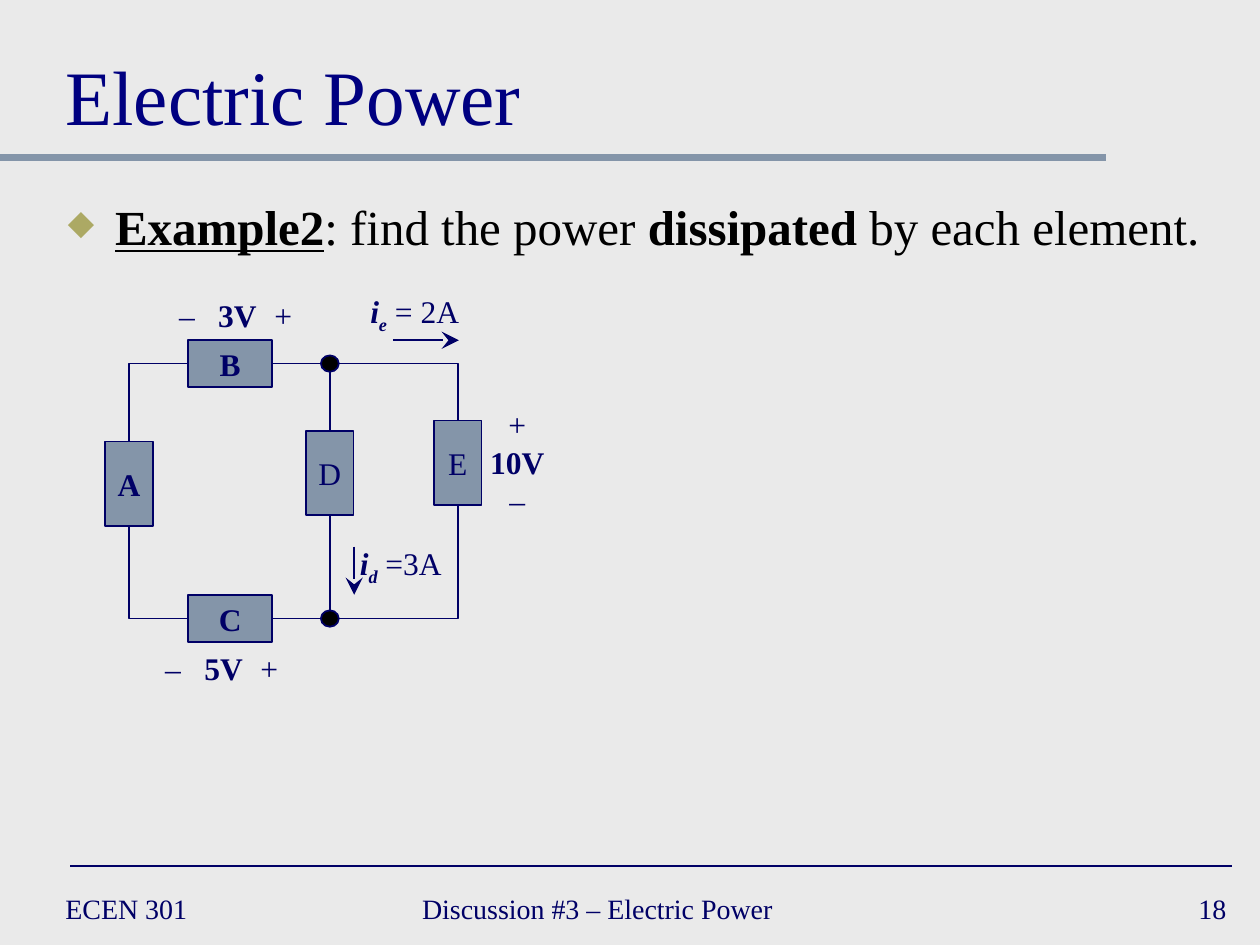
from dataclasses import dataclass

from lxml.etree import SubElement
from pptx import Presentation
from pptx.dml.color import RGBColor
from pptx.enum.shapes import MSO_CONNECTOR as Link, MSO_SHAPE as Preset
from pptx.enum.text import MSO_ANCHOR as Anchor, PP_ALIGN as Align
from pptx.oxml.ns import qn
from pptx.util import Cm, Pt


@dataclass(frozen=True)
class Theme:
    font: str = "Times New Roman"
    paper: str = "EAEAEA"
    ink: str = "000066"
    heading: str = "000080"
    steel: str = "8495A9"
    olive: str = "ACA964"
    black: str = "000000"
    title_pt: int = 44
    body_pt: int = 28
    label_pt: int = 18
    footer_pt: int = 16


def rgb(value):
    return RGBColor.from_string(value)


class SlideBuilder:
    def __init__(self, slide, theme):
        self.slide, self.shapes, self.theme = slide, slide.shapes, theme
        fill = slide.background.fill
        fill.solid()
        fill.fore_color.rgb = rgb(theme.paper)

    def add_runs(self, paragraph, runs, size, color=None):
        """Add (text, style) runs; style letters: b bold, i italic, u underline, s subscript."""
        for text, style in runs:
            run = paragraph.add_run()
            run.text = text
            font = run.font
            font.name, font.size = self.theme.font, Pt(size)
            font.color.rgb = rgb(color or self.theme.ink)
            font.bold, font.italic = "b" in style, "i" in style
            font.underline = "u" in style
            if "s" in style:
                run._r.get_or_add_rPr().set("baseline", "-25000")

    def title(self, text, left, top, width, height):
        holder = self.shapes.title
        holder.left, holder.top = Cm(left), Cm(top)
        holder.width, holder.height = Cm(width), Cm(height)
        frame = holder.text_frame
        frame.vertical_anchor = Anchor.BOTTOM
        heading = frame.paragraphs[0]
        heading.alignment = Align.LEFT
        self.add_runs(heading, [(text, "")], self.theme.title_pt, self.theme.heading)

    def text_box(self, left, top, width, height, side_inset=0.25):
        frame = self.shapes.add_textbox(Cm(left), Cm(top), Cm(width), Cm(height)).text_frame
        frame.word_wrap = True
        frame.margin_left = frame.margin_right = Cm(side_inset)
        return frame

    def bullet(self, runs, left, top, width, height, indent=0.95):
        point = self.text_box(left, top, width, height).paragraphs[0]
        props = point._p.get_or_add_pPr()
        props.set("marL", str(Cm(indent)))
        props.set("indent", str(-Cm(indent)))
        color = SubElement(props, qn("a:buClr"))
        SubElement(color, qn("a:srgbClr"), val=self.theme.olive)
        SubElement(props, qn("a:buSzPct"), val="70000")
        SubElement(props, qn("a:buChar"), char="◆")
        self.add_runs(point, runs, self.theme.body_pt, self.theme.black)

    def footer(self, text, left, width, align=Align.LEFT):
        frame = self.text_box(left, 17.78, width, 1.07)
        frame.vertical_anchor = Anchor.MIDDLE
        frame.paragraphs[0].alignment = align
        self.add_runs(frame.paragraphs[0], [(text, "")], self.theme.footer_pt)

    def label(self, lines, left, top, width, height=1.02):
        frame = self.text_box(left, top, width, height, side_inset=0)
        for index, runs in enumerate(lines):
            line = frame.add_paragraph() if index else frame.paragraphs[0]
            line.alignment = Align.CENTER
            self.add_runs(line, runs, self.theme.label_pt)

    def polarity(self, voltage, left, top):
        """Set minus, voltage and plus in one row, spaced with tab stops."""
        row = self.text_box(left, top, 2.57, 1.02, side_inset=0).paragraphs[0]
        stops = SubElement(row._p.get_or_add_pPr(), qn("a:tabLst"))
        for stop in (0.79, 1.92):
            SubElement(stops, qn("a:tab"), pos=str(Cm(stop)), algn="l")
        self.add_runs(row, [("–\t", ""), (voltage, "b"), ("\t+", "")], self.theme.label_pt)

    def outline(self, shape, fill=None):
        shape.shadow.inherit = False
        if fill:
            shape.fill.solid()
            shape.fill.fore_color.rgb = rgb(fill)
        else:
            shape.fill.background()
        shape.line.color.rgb = rgb(self.theme.ink)
        shape.line.width = Pt(1)

    def centred(self, preset, x, y, width, height, fill):
        shape = self.shapes.add_shape(
            preset, Cm(x - width / 2), Cm(y - height / 2), Cm(width), Cm(height))
        self.outline(shape, fill)
        return shape

    def element(self, name, x, y, width, height, style=""):
        box = self.centred(Preset.RECTANGLE, x, y, width, height, self.theme.steel)
        frame = box.text_frame
        frame.word_wrap = False
        frame.vertical_anchor = Anchor.MIDDLE
        frame.paragraphs[0].alignment = Align.CENTER
        self.add_runs(frame.paragraphs[0], [(name, style)], self.theme.label_pt)
        return box

    def line(self, start, end, color=None, width=1, joint=None, arrow=False):
        """Draw a straight line; joint is the (box, side) where it begins."""
        link = self.shapes.add_connector(Link.STRAIGHT, *map(Cm, start + end))
        if joint:
            link.begin_connect(*joint)
        link.line.color.rgb = rgb(color or self.theme.ink)
        link.line.width = Pt(width)
        if arrow:
            SubElement(link.line._get_or_add_ln(), qn("a:tailEnd"),
                       type="stealth", w="lg", len="lg")
        SubElement(link._element.spPr, qn("a:effectLst"))

    def corner_wire(self, start, end):
        """Run level from start, then upright to end."""
        (x1, y1), (x2, y2) = start, end
        builder = self.shapes.build_freeform(Cm(x1), Cm(y1))
        builder.add_line_segments([(Cm(x2), Cm(y1)), (Cm(x2), Cm(y2))], close=False)
        self.outline(builder.convert_to_shape())


def draw_circuit(page):
    long, short = 1.7, 0.96
    node_width, node_height = 0.36, 0.33
    left, source, middle, right = 2.6, 4.64, 6.65, 9.23
    top, bottom = 7.33, 12.47
    a_y, d_y, e_y = 9.75, 9.54, 9.33

    page.element("A", left, a_y, short, long, "b")
    box_b = page.element("B", source, top, long, short, "b")
    box_c = page.element("C", source, bottom, long, short, "b")
    box_d = page.element("D", middle, d_y, short, long)
    page.element("E", right, e_y, short, long)

    for y, box, inward in ((top, box_b, 1), (bottom, box_c, -1)):
        page.centred(Preset.OVAL, middle, y, node_width, node_height, page.theme.black)
        page.corner_wire((source - long / 2, y), (left, a_y - inward * long / 2))
        page.corner_wire((middle + node_width / 2, y), (right, e_y - inward * long / 2))
        page.line((source + long / 2, y), (middle - node_width / 2, y), joint=(box, 3))
        page.line((middle, d_y - inward * long / 2), (middle, y + inward * node_height / 2),
                  joint=(box_d, 0 if inward > 0 else 2))

    page.polarity("3V", 3.61, 5.84)
    page.polarity("5V", 3.33, 12.95)
    page.label([[("+", "")], [("10V", "b")], [("–", "")]], 9.63, 8.05, 1.6, 2.54)
    page.line((7.92, 6.86), (9.25, 6.86), arrow=True)
    page.line((7.14, 11.02), (7.14, 11.99), arrow=True)
    page.label([[("i", "bi"), ("e", "bis"), (" = 2A", "")]], 7.19, 5.77, 2.34)
    page.label([[("i", "bi"), ("d", "bis"), (" =3A", "")]], 6.99, 10.85, 2.18)


def main():
    deck = Presentation()
    deck.slide_width, deck.slide_height = Cm(25.4), Cm(19.05)
    theme = Theme()
    page = SlideBuilder(deck.slides.add_slide(deck.slide_layouts[5]), theme)

    page.line((0, 3.18), (22.3, 3.18), theme.steel, 4)
    page.line((1.42, 17.46), (24.84, 17.46))
    page.footer("ECEN 301", 1.07, 5.51)
    page.footer("Discussion #3 – Electric Power", 8.26, 9.73)
    page.footer("18", 19.69, 5.28, Align.RIGHT)
    page.title("Electric Power", 1.07, 0.43, 23.29, 2.54)
    page.bullet([("Example2", "bu"), (": find the power ", ""), ("dissipated", "b"),
                 (" by each element.", "")], 1.12, 3.84, 23.85, 2.44)
    draw_circuit(page)
    deck.save("out.pptx")


if __name__ == "__main__":
    main()
